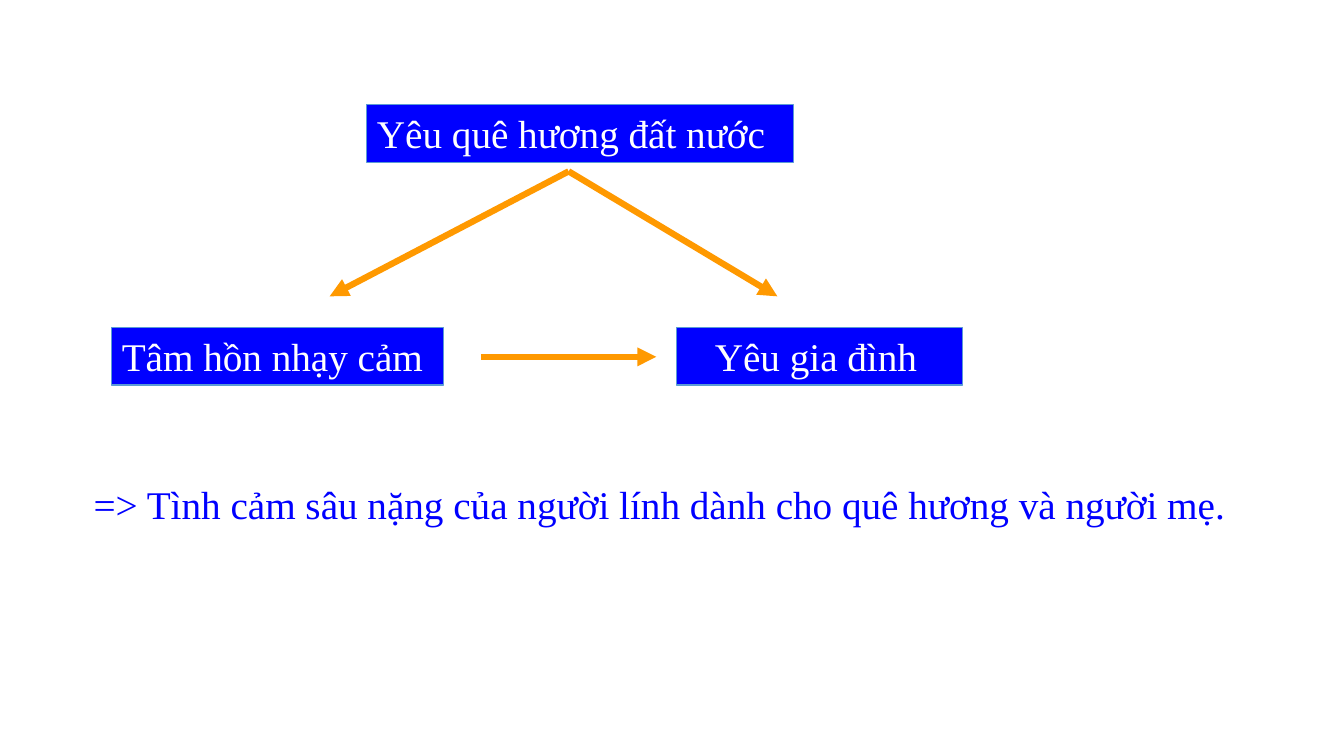
from lxml.etree import SubElement
from pptx import Presentation
from pptx.dml.color import RGBColor
from pptx.enum.shapes import MSO_CONNECTOR as Connector, MSO_SHAPE as Shape
from pptx.enum.text import MSO_ANCHOR as Anchor, PP_ALIGN as Align
from pptx.oxml.ns import qn
from pptx.util import Inches, Pt

BLUE = RGBColor(0x00, 0x00, 0xFF)
EDGE = RGBColor(0x5B, 0x9B, 0xD5)
ORANGE = RGBColor(0xFF, 0x99, 0x00)
WHITE = RGBColor(0xFF, 0xFF, 0xFF)


def write(shape, text, color, align):
    frame = shape.text_frame
    frame.word_wrap = True
    frame.vertical_anchor = Anchor.TOP
    para = frame.paragraphs[0]
    para.alignment = align
    span = para.add_run()
    span.text = text
    span.font.name = "Times New Roman"
    span.font.size = Pt(28)
    span.font.color.rgb = color
    return para


def add_idea(page, text, left, top, width, indent=0):
    box = page.shapes.add_shape(
        Shape.RECTANGLE, Inches(left), Inches(top), Inches(width), Inches(0.57))
    box.shadow.inherit = False
    box.fill.solid()
    box.fill.fore_color.rgb = BLUE
    box.line.color.rgb = EDGE
    box.line.width = Pt(0.75)
    box.text_frame.margin_left = Inches(0.1 + indent)
    write(box, text, WHITE, Align.LEFT)


def add_arrow(page, start, end):
    arrow = page.shapes.add_connector(
        Connector.STRAIGHT, *map(Inches, start + end))
    arrow.line.color.rgb = ORANGE
    arrow.line.width = Pt(4.5)
    SubElement(arrow.line._get_or_add_ln(), qn("a:tailEnd"), type="triangle")
    SubElement(arrow._element.spPr, qn("a:effectLst"))


def add_diagram(page, left, top):
    lower = top + 2.21
    add_idea(page, "Tâm hồn nhạy cảm", left, lower, 3.29)
    add_idea(page, "Yêu gia đình", left + 5.6, lower, 2.84, indent=0.28)
    add_idea(page, "Yêu quê hương đất nước", left + 2.53, top, 4.23)
    peak = (left + 4.53, top + 0.66)
    for offset in (2.16, 6.6):
        add_arrow(page, peak, (left + offset, top + 1.9))
    level = top + 2.5
    add_arrow(page, (left + 3.66, level), (left + 5.4, level))


def add_conclusion(page, left, top, width, height):
    box = page.shapes.add_textbox(*map(Inches, (left, top, width, height)))
    para = write(
        box, "=> Tình cảm sâu nặng của người lính dành cho quê hương và người mẹ.",
        BLUE, Align.JUSTIFY)
    para.line_spacing = 1.27
    para.space_after = Pt(5)


def main():
    deck = Presentation()
    deck.slide_width = Inches(13.33)
    deck.slide_height = Inches(7.5)
    page = deck.slides.add_slide(deck.slide_layouts[6])
    add_diagram(page, 1.11, 1.04)
    add_conclusion(page, 0.83, 4.59, 11.7, 0.7)
    deck.save("out.pptx")


if __name__ == "__main__":
    main()
